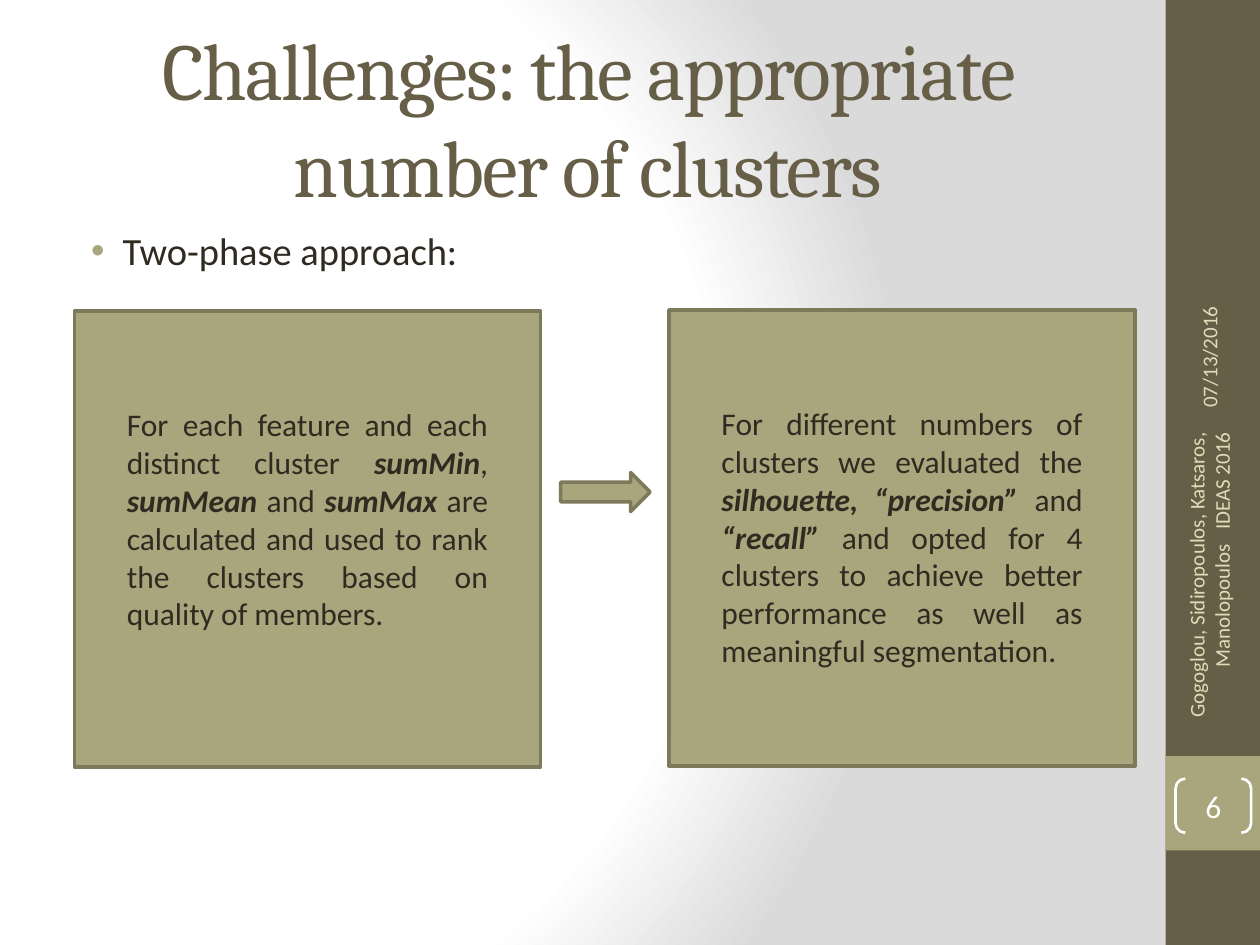
import pptx
import pptx.dml.color
import pptx.enum.shapes
import pptx.enum.text
import pptx.oxml
import pptx.oxml.ns
import pptx.util

Pt = pptx.util.Pt
SHAPE = pptx.enum.shapes.MSO_SHAPE
ALIGN = pptx.enum.text.PP_ALIGN
ANCHOR = pptx.enum.text.MSO_ANCHOR
qn = pptx.oxml.ns.qn

COLORS = {
    "brown": "675E47", "olive": "A9A57C", "edge": "7D7A5C", "ink": "2F2B20",
    "cream": "DFDCB7", "white": "FFFFFF", "gray": "DADADA",
}


def rgb(name):
    return pptx.dml.color.RGBColor.from_string(COLORS[name])


def add_block(slide, kind, box, fill=None, line=None, width=2):
    block = slide.shapes.add_shape(kind, *map(Pt, box))
    block.shadow.inherit = False
    if fill:
        block.fill.solid()
        block.fill.fore_color.rgb = rgb(fill)
    else:
        block.fill.background()
    if line:
        block.line.color.rgb = rgb(line)
        block.line.width = Pt(width)
    else:
        block.line.fill.background()
    return block


def write(frame, pieces, size, color, align=ALIGN.LEFT, font="Calibri"):
    """Fill the frame with (text, emphasised) pieces in one paragraph."""
    frame.word_wrap = True
    paragraph = frame.paragraphs[0]
    paragraph.alignment = align
    for words, emphasised in pieces:
        run = paragraph.add_run()
        run.text = words
        run.font.name = font
        run.font.size = Pt(size)
        run.font.color.rgb = rgb(color)
        run.font.bold = run.font.italic = emphasised
    return paragraph


def add_text(slide, box, pieces, size, color, align=ALIGN.LEFT,
             font="Calibri", anchor=ANCHOR.TOP, rotation=0):
    label = slide.shapes.add_textbox(*map(Pt, box))
    label.rotation = rotation
    label.text_frame.vertical_anchor = anchor
    return write(label.text_frame, pieces, size, color, align, font)


def paint_background(slide):
    slide.background.fill.gradient()
    linear = next(slide.element.iter(qn("a:gradFill")))
    stops = "".join(
        f'<a:gs pos="{position}"><a:srgbClr val="{COLORS[color]}"/></a:gs>'
        for position, color in ((0, "white"), (75000, "white"), (100000, "gray")))
    radial = pptx.oxml.parse_xml(
        f'<a:gradFill {pptx.oxml.ns.nsdecls("a")} rotWithShape="1">'
        f'<a:gsLst>{stops}</a:gsLst><a:path path="circle">'
        '<a:fillToRect l="20000" t="50000" r="100000" b="50000"/>'
        '</a:path></a:gradFill>')
    linear.getparent().replace(linear, radial)


def add_sidebar(slide, box):
    left, top, width, height = box
    add_block(slide, SHAPE.RECTANGLE, box, "brown")
    add_block(slide, SHAPE.RECTANGLE, (left, top + 432, width, 54), "olive")

    # Date and authors, reading upwards
    add_text(slide, (left - 71.28, top + 129.6, 192.24, 28.8),
             [("07/13/2016", False)], 12, "cream",
             anchor=ANCHOR.MIDDLE, rotation=270)
    add_text(slide, (left - 68.4, top + 318.96, 186.48, 28.8),
             [("Gogoglou, Sidiropoulos, Katsaros, Manolopoulos   IDEAS 2016", False)],
             12, "cream", ALIGN.RIGHT, anchor=ANCHOR.MIDDLE, rotation=270)

    # Page number in brackets
    page = add_block(slide, SHAPE.DOUBLE_BRACKET,
                     (left + 5.76, top + 444.96, 43.2, 30.96), line="white", width=1.5)
    page.adjustments[0] = 0.18
    frame = page.text_frame
    frame.margin_left = frame.margin_right = frame.margin_top = frame.margin_bottom = 0
    frame.vertical_anchor = ANCHOR.MIDDLE
    write(frame, [("6", False)], 18, "white", ALIGN.CENTER)


def add_heading(slide, box):
    heading = add_text(slide, box,
                       [("Challenges: the appropriate number of clusters", False)],
                       46, "brown", ALIGN.CENTER, "Cambria", ANCHOR.MIDDLE)
    heading.runs[0].font._element.set("spc", "-100")


def add_bullet(slide, box):
    bullet = add_text(slide, box, [("Two-phase approach:", False)], 22, "ink")
    bullet.space_before = Pt(4.4)
    properties = bullet._p.get_or_add_pPr()
    properties.set("marL", str(Pt(27)))
    properties.set("indent", str(Pt(-18)))
    namespace = pptx.oxml.ns.nsdecls("a")
    for mark in (
            f'<a:buClr {namespace}><a:srgbClr val="{COLORS["olive"]}"/></a:buClr>',
            f'<a:buFont {namespace} typeface="Arial"/>',
            f'<a:buChar {namespace} char="•"/>'):
        properties.append(pptx.oxml.parse_xml(mark))


def add_phase(slide, box, pieces):
    left, top, width, height = box
    add_block(slide, SHAPE.RECTANGLE, box, "olive", "edge")
    inset = 22.9
    add_text(slide, (left + inset, top + 50.4, width - 2 * inset, 150),
             pieces, 18, "ink", ALIGN.JUSTIFY)


def main():
    deck = pptx.Presentation()
    deck.slide_width, deck.slide_height = Pt(720), Pt(540)
    slide = deck.slides.add_slide(deck.slide_layouts[6])

    paint_background(slide)
    add_sidebar(slide, (666, 0, 54, 540))
    add_heading(slide, (36, 21.6, 600, 90))
    add_bullet(slide, (36, 126, 600, 378))

    # Two phases joined by an arrow
    add_phase(slide, (42.5, 177.8, 266.4, 260.6), [
        ("For each feature and each distinct cluster ", False),
        ("sumMin", True), (", ", False), ("sumMean", True),
        (" and ", False), ("sumMax", True),
        (" are calculated and used to rank the clusters based on "
         "quality of members.", False)])
    add_block(slide, SHAPE.RIGHT_ARROW, (320.4, 270, 51.1, 22.3), "olive", "edge")
    add_phase(slide, (382.3, 177.1, 266.4, 260.6), [
        ("For different numbers of clusters we evaluated the ", False),
        ("silhouette, “precision” ", True), ("and ", False),
        ("“recall” ", True),
        ("and opted for 4 clusters to achieve better performance as well as "
         "meaningful segmentation.", False)])

    deck.save("out.pptx")


if __name__ == "__main__":
    main()
